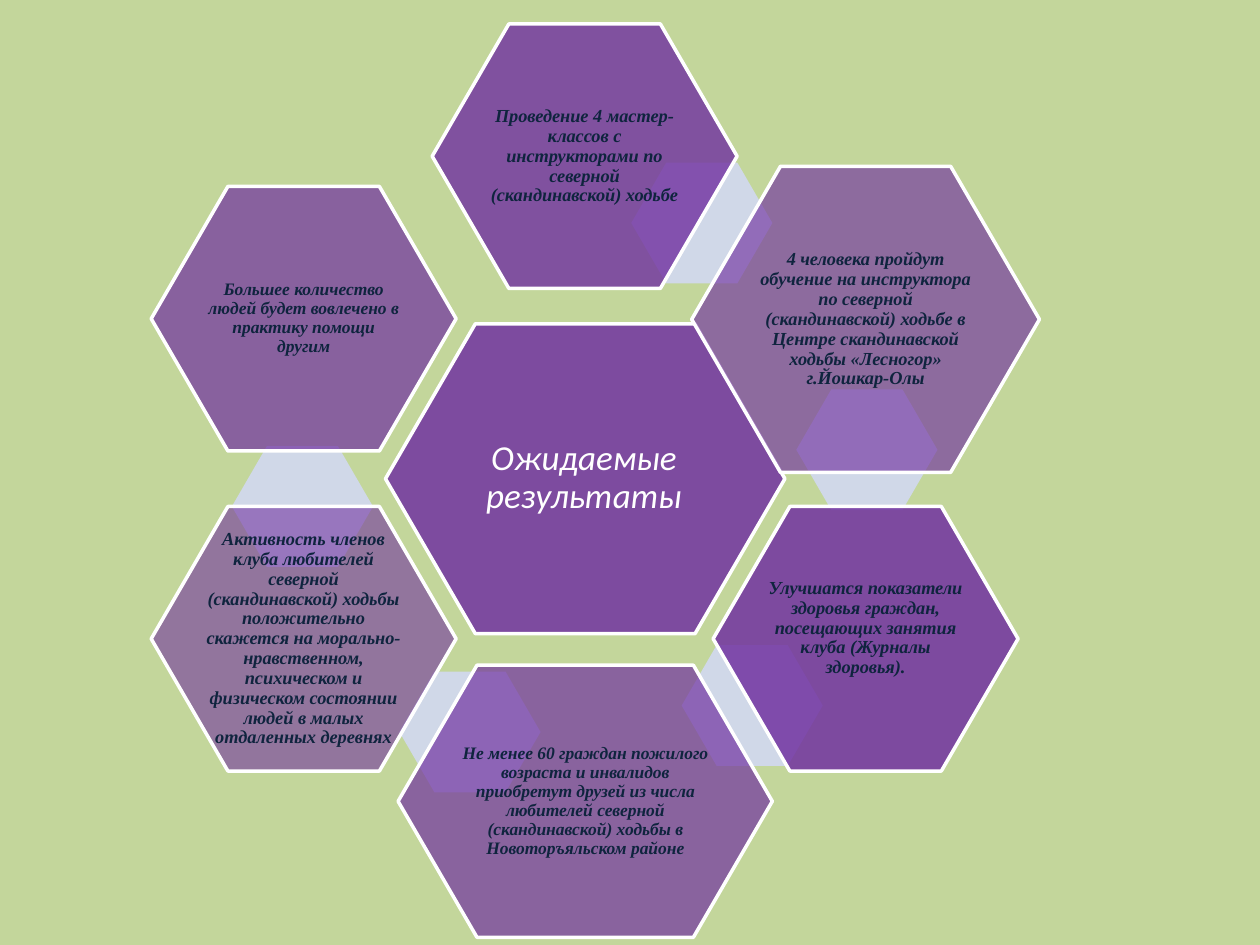
from dataclasses import dataclass

from lxml import etree
from pptx import Presentation
from pptx.dml.color import RGBColor
from pptx.enum.shapes import MSO_SHAPE as SHAPE
from pptx.enum.text import MSO_ANCHOR as ANCHOR, MSO_AUTO_SIZE as AUTO, PP_ALIGN as ALIGN
from pptx.oxml.ns import qn
from pptx.util import Inches, Pt


@dataclass(frozen=True)
class Theme:
    background: str = "C3D69B"
    petal: str = "7030A0"
    link: str = "D0D8E8"
    outline: str = "FFFFFF"
    title: str = "FFFFFF"
    body: str = "0F243E"
    title_font: str = "Calibri"
    body_font: str = "Times New Roman"
    title_size: float = 20
    body_size: float = 10.5
    small_size: float = 10


theme = Theme()
LINK_W, LINK_H = 1.12, 0.96

prs = Presentation()
prs.slide_width, prs.slide_height = Inches(10), Inches(7.5)
s = prs.slides.add_slide(prs.slide_layouts[5])
s.background.fill.solid()
s.background.fill.fore_color.rgb = RGBColor.from_string(theme.background)


def add_hexagon(left, top, width, height, color, opacity=None):
    """Add a hexagon; one with an opacity in percent also gets the white outline."""
    sp = s.shapes.add_shape(SHAPE.HEXAGON, Inches(left), Inches(top), Inches(width), Inches(height))
    sp.shadow.inherit = False
    sp.adjustments[0] = 0.29
    sp.fill.solid()
    sp.fill.fore_color.rgb = RGBColor.from_string(color)
    if opacity is None:
        sp.line.fill.background()
    else:
        rgb = sp.fill._xPr.find(qn("a:solidFill")).find(qn("a:srgbClr"))
        etree.SubElement(rgb, qn("a:alpha")).set("val", str(opacity * 1000))
        sp.line.color.rgb = RGBColor.from_string(theme.outline)
        sp.line.width = Pt(2)
    return sp


def write_text(sp, text, *, size, color, font, bold=False, inset=0.02, lift=0):
    """Write centred italic text; lift raises it by extra space at the bottom."""
    tf = sp.text_frame
    tf.word_wrap = True
    tf.auto_size = AUTO.NONE
    tf.vertical_anchor = ANCHOR.MIDDLE
    tf.margin_left = tf.margin_right = tf.margin_top = Inches(inset)
    tf.margin_bottom = Inches(inset + lift)
    p = tf.paragraphs[0]
    p.alignment = ALIGN.CENTER
    p.line_spacing = 0.9
    r = p.add_run()
    r.text = text
    r.font.name, r.font.size = font, Pt(size)
    r.font.bold, r.font.italic = bold, True
    r.font.color.rgb = RGBColor.from_string(color)


# Centre of the flower: the slide title
center = add_hexagon(3.06, 2.57, 3.17, 2.46, theme.petal, 83)
title = s.shapes.title
title.left, title.top, title.width, title.height = map(Inches, (3.55, 2.95, 2.17, 1.69))
center.element.addnext(title.element)
write_text(title, "Ожидаемые результаты", size=theme.title_size, color=theme.title,
           font=theme.title_font, inset=0.03)

# Petals clockwise from the top: link position, petal box, opacity, text share, size, lift, text
petals = [
    ((5.01, 1.29), (3.43, 0.19, 2.42, 2.1), 80, 0.67, theme.body_size, 0,
     "Проведение 4 мастер-классов с инструкторами по северной (скандинавской) ходьбе"),
    ((6.32, 3.09), (5.49, 1.32, 2.76, 2.43), 64, 0.67, theme.body_size, 0,
     "4 человека пройдут обучение на инструктора по северной (скандинавской) ходьбе в "
     "Центре скандинавской ходьбы «Лесногор» г.Йошкар-Олы"),
    ((5.41, 5.12), (5.66, 4.02, 2.42, 2.1), 84, 0.67, theme.body_size, 0.17,
     "Улучшатся показатели здоровья граждан, посещающих занятия клуба (Журналы здоровья)."),
    ((3.17, 5.33), (3.16, 5.28, 2.97, 2.16), 69, 0.69, theme.small_size, 0,
     "Не менее 60 граждан пожилого возраста и инвалидов приобретут друзей из числа "
     "любителей северной (скандинавской) ходьбы в Новоторъяльском районе"),
    ((1.84, 3.54), (1.2, 4.02, 2.42, 2.1), 58, 0.67, theme.body_size, 0,
     "Активность членов клуба любителей северной (скандинавской) ходьбы положительно "
     "скажется на морально-нравственном, психическом и физическом состоянии людей "
     "в малых отдаленных деревнях"),
    (None, (1.2, 1.48, 2.42, 2.1), 70, 0.67, theme.small_size, 0,
     "Большее количество людей будет вовлечено в практику помощи другим"),
]
for link, (left, top, width, height), opacity, share, size, lift, text in petals:
    if link:
        add_hexagon(*link, LINK_W, LINK_H, theme.link)
    add_hexagon(left, top, width, height, theme.petal, opacity)
    margin = (1 - share) / 2
    box = s.shapes.add_textbox(Inches(left + width * margin), Inches(top + height * margin),
                               Inches(width * share), Inches(height * share))
    write_text(box, text, size=size, color=theme.body, font=theme.body_font, bold=True, lift=lift)

prs.save("out.pptx")
